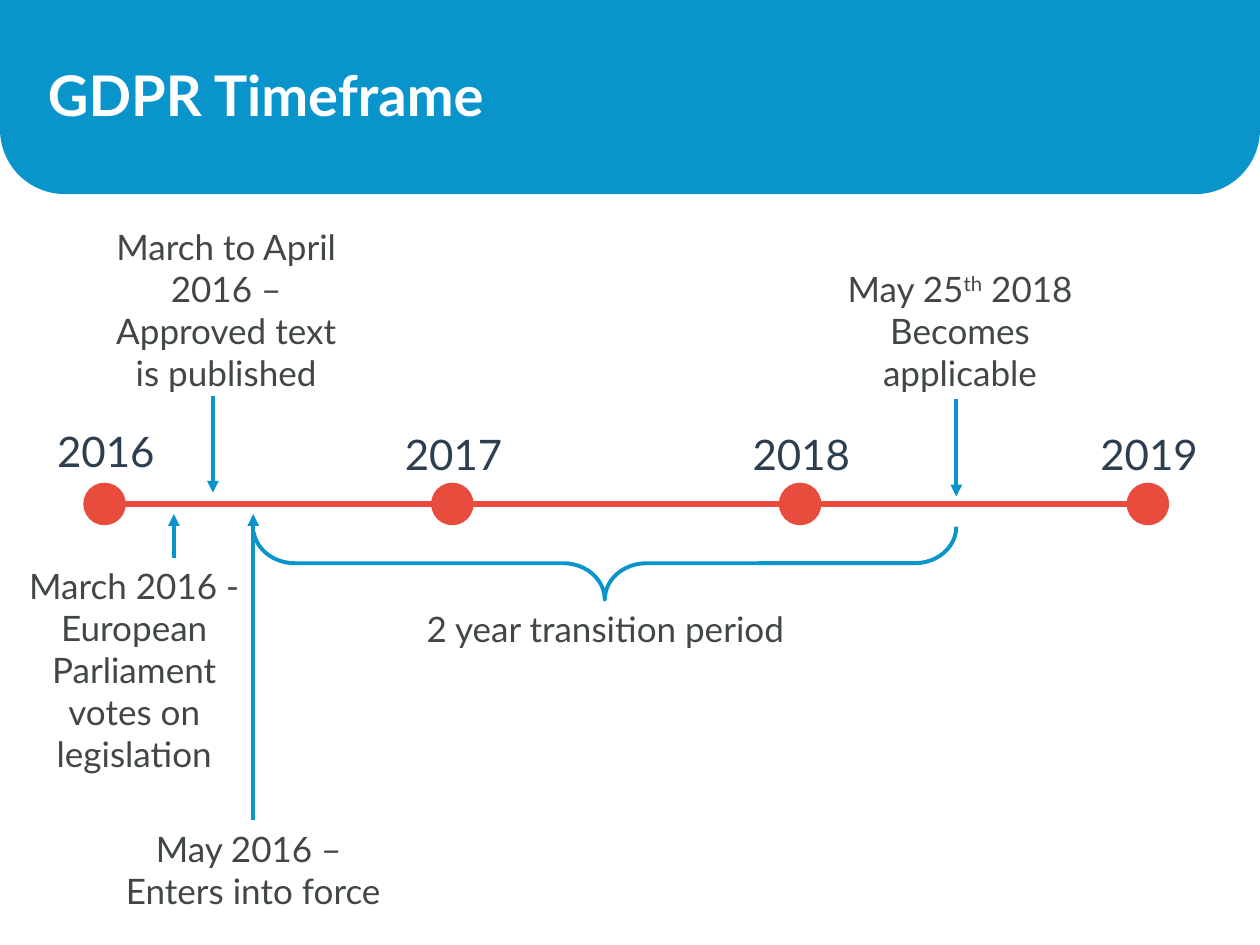
import pptx
import pptx.util
import pptx.dml.color
import pptx.enum.shapes
import pptx.enum.text
import pptx.oxml
import pptx.oxml.ns

Inches = pptx.util.Inches
Pt = pptx.util.Pt
Shape = pptx.enum.shapes.MSO_SHAPE
Align = pptx.enum.text.PP_ALIGN

COLORS = {
    "blue": "0995CC",
    "red": "E74C3C",
    "year": "2C3E4F",
    "text": "414647",
    "white": "FFFFFF",
}
YEAR_FONT = {"name": "Lato", "size": Pt(24), "color": "year"}
NOTE_FONT = {"name": "Lato", "size": Pt(20), "color": "text"}
TITLE_FONT = {"name": "Lato", "size": Pt(32), "bold": True, "color": "white"}

AXIS_Y = 4
DOT_SIZE = 0.31
FIRST_DOT_X = 0.83
YEAR_STEP = 2.76
# year: top of its label
YEARS = {"2016": 3.33, "2017": 3.35, "2018": 3.35, "2019": 3.35}

# left, top, width, height, text pieces
NOTES = [
    (0.04, 4.43, 2.05, 1.78, ["March 2016 - European Parliament votes on legislation"]),
    (0.77, 1.74, 2.05, 1.45, ["March to April 2016 – Approved text is published"]),
    (3.19, 4.77, 3.23, 0.44, ["2 year transition period"]),
    (6.52, 2.07, 2.2, 1.11, ["May 25", "^th", " 2018 Becomes applicable"]),
    (0.61, 6.52, 2.8, 0.77, ["May 2016 – ", "\n", "Enters into force"]),
]
# x, start y, end y
ARROWS = [(1.38, 4.43, 4.08), (1.69, 3.14, 3.91), (7.59, 3.17, 3.94), (2.01, 6.51, 4.08)]


def rgb(color):
    return pptx.dml.color.RGBColor.from_string(COLORS[color])


def apply_font(font, values):
    for name, value in values.items():
        if name == "color":
            font.color.rgb = rgb(value)
        else:
            setattr(font, name, value)


def add_shape(slide, kind, box, fill=None, line=None, line_width=0):
    shape = slide.shapes.add_shape(kind, *map(Inches, box))
    shape.shadow.inherit = False
    if fill:
        shape.fill.solid()
        shape.fill.fore_color.rgb = rgb(fill)
    else:
        shape.fill.background()
    if line:
        shape.line.color.rgb = rgb(line)
        shape.line.width = Pt(line_width)
    else:
        shape.line.fill.background()
    return shape


def add_line(slide, start, end, color, width, arrow=False):
    line = slide.shapes.add_connector(
        pptx.enum.shapes.MSO_CONNECTOR.STRAIGHT, *map(Inches, start + end))
    line.line.color.rgb = rgb(color)
    line.line.width = Pt(width)
    if arrow:
        tail = pptx.oxml.parse_xml(
            f'<a:tailEnd {pptx.oxml.ns.nsdecls("a")} type="triangle"/>')
        line.line._get_or_add_ln().append(tail)
    line._element.spPr.append(
        pptx.oxml.parse_xml(f'<a:effectLst {pptx.oxml.ns.nsdecls("a")}/>'))


def add_label(slide, box, pieces, font):
    """Add centred text; a piece "\\n" breaks the line and "^" marks superscript."""
    label = slide.shapes.add_textbox(*map(Inches, box))
    frame = label.text_frame
    frame.word_wrap = True
    frame.auto_size = pptx.enum.text.MSO_AUTO_SIZE.SHAPE_TO_FIT_TEXT
    paragraph = frame.paragraphs[0]
    paragraph.alignment = Align.CENTER
    for piece in pieces:
        if piece == "\n":
            paragraph.add_line_break()
            continue
        run = paragraph.add_run()
        run.text = piece.lstrip("^")
        apply_font(run.font, font)
        if piece.startswith("^"):
            run._r.get_or_add_rPr().set("baseline", "30000")


def add_header(slide):
    banner = add_shape(slide, Shape.ROUND_2_SAME_RECTANGLE, (0, 0, 10, 1.54), "blue")
    banner.rotation = 180
    banner.adjustments[0] = 0.333
    slide.shapes._spTree.insert(2, banner._element)

    title = slide.shapes.title
    box = {"left": 0.28, "top": 0.13, "width": 9.43, "height": 1.23}
    for name, value in box.items():
        setattr(title, name, Inches(value))
    title.text_frame.text = "GDPR Timeframe"
    title.text_frame.vertical_anchor = pptx.enum.text.MSO_ANCHOR.MIDDLE
    paragraph = title.text_frame.paragraphs[0]
    paragraph.alignment = Align.LEFT
    apply_font(paragraph.runs[0].font, TITLE_FONT)


def add_axis(slide):
    end_x = FIRST_DOT_X + YEAR_STEP * (len(YEARS) - 1)
    add_line(slide, (FIRST_DOT_X, AXIS_Y), (end_x, AXIS_Y), "red", 3)
    for index, (year, top) in enumerate(YEARS.items()):
        x = FIRST_DOT_X + index * YEAR_STEP
        dot = (x - DOT_SIZE / 2, AXIS_Y - DOT_SIZE / 2, DOT_SIZE, DOT_SIZE)
        add_shape(slide, Shape.OVAL, dot, "red", "red", 2)
        add_label(slide, (x - 0.56, top, 1.14, 0.5), [year], YEAR_FONT)


def add_transition_brace(slide):
    brace = add_shape(slide, Shape.LEFT_BRACE, (4.51, 1.68, 0.58, 5.58),
                      line="blue", line_width=2.25)
    brace.rotation = 270
    brace.adjustments[0] = 0.568
    brace.adjustments[1] = 0.5
    # Hides the end of the brace behind the arrowhead
    add_shape(slide, Shape.ISOSCELES_TRIANGLE, (1.95, 4.08, 0.14, 0.14), "white")


def main():
    presentation = pptx.Presentation()
    presentation.slide_width = Inches(10)
    presentation.slide_height = Inches(7.5)
    slide = presentation.slides.add_slide(presentation.slide_layouts[5])
    add_header(slide)
    add_axis(slide)
    for *box, pieces in NOTES:
        add_label(slide, box, pieces, NOTE_FONT)
    add_transition_brace(slide)
    for x, start_y, end_y in ARROWS:
        add_line(slide, (x, start_y), (x, end_y), "blue", 2.25, arrow=True)
    presentation.save("out.pptx")


if __name__ == "__main__":
    main()
